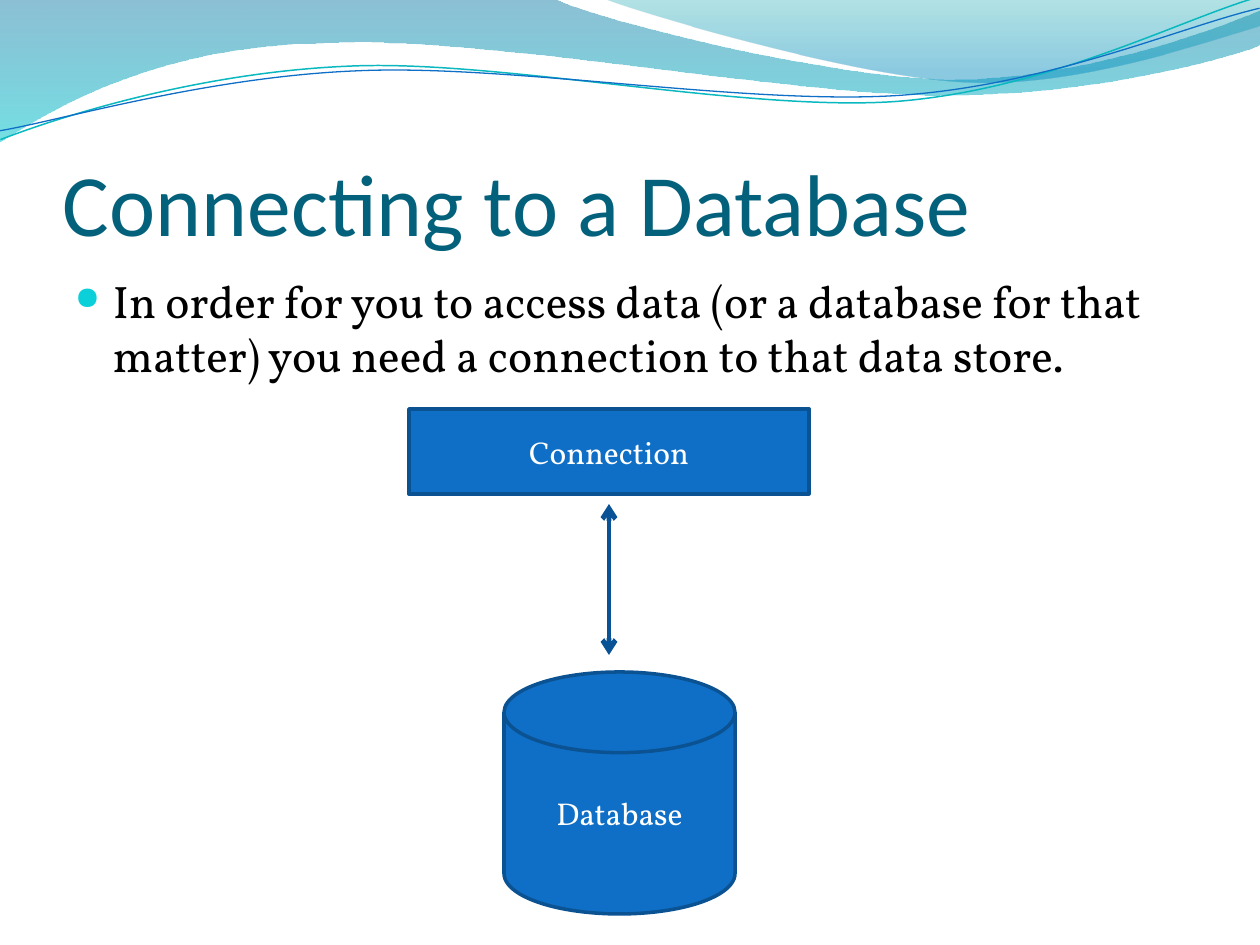
import dataclasses

import lxml.etree
import pptx
import pptx.dml.color
import pptx.enum.shapes
import pptx.enum.text
import pptx.oxml.ns
import pptx.util

PX = 914400 / 126  # EMU in one pixel
qn = pptx.oxml.ns.qn
rgb = pptx.dml.color.RGBColor.from_string
Anchor = pptx.enum.text.MSO_ANCHOR
Align = pptx.enum.text.PP_ALIGN
Shape = pptx.enum.shapes.MSO_SHAPE


@dataclasses.dataclass(frozen=True)
class Theme:
    title: str = "04617B"
    text: str = "000000"
    bullet: str = "0BD0D9"
    box: str = "0F6FC6"
    box_line: str = "0B5292"
    arrow: str = "095295"
    teal_line: str = "0AB8BF"
    label: str = "FFFFFF"
    heading_font: str = "Calibri"
    body_font: str = "Vollkorn"
    title_size: int = 50
    body_size: int = 26
    label_size: int = 18


theme = Theme()


def write_text(shape, text, *, size, color, font=theme.body_font,
               align=Align.LEFT, anchor=Anchor.TOP, insets=(12, 6, 12, 6)):
    """Fill a shape with one paragraph and return it; insets are left, top, right, bottom."""
    frame = shape.text_frame
    frame.word_wrap = True
    frame.vertical_anchor = anchor
    frame.margin_left, frame.margin_top, frame.margin_right, frame.margin_bottom = (
        round(inset * PX) for inset in insets)
    paragraph = frame.paragraphs[0]
    paragraph.alignment = align
    run = paragraph.add_run()
    run.text = text
    run.font.name = font
    run.font.size = pptx.util.Pt(size)
    run.font.color.rgb = rgb(color)
    return paragraph


def draw_curve(shapes, start, segments, close=False):
    """Draw a path; a segment of one point is straight, of three a Bezier curve."""
    points = [(round(x * PX), round(y * PX))
              for x, y in [start, *(point for segment in segments for point in segment)]]
    builder = shapes.build_freeform(*points[0], scale=1.0)
    builder.add_line_segments(points[1:], close=close)
    shape = builder.convert_to_shape()
    shape.shadow.inherit = False
    straight_parts = iter(list(shape._element.iter(qn("a:lnTo"))))
    for segment in segments:
        parts = [next(straight_parts) for _ in segment]
        if len(parts) == 3:
            curve = lxml.etree.Element(qn("a:cubicBezTo"))
            parts[0].addprevious(curve)
            for part in parts:
                curve.append(part[0])
                part.getparent().remove(part)
    return shape


presentation = pptx.Presentation()
presentation.slide_width = round(1260 * PX)
presentation.slide_height = round(945 * PX)
slide = presentation.slides.add_slide(presentation.slide_layouts[6])
shapes = slide.shapes

# Waves: start, segments, gradient stops (position, colour, opacity in percent)
waves = [
    ((0, 0), [
        [(554, -1)],
        [(600, 21), (837, 79), (955, 79)],
        [(1075, 79), (1207, 33), (1260, 11)],
        [(1261, 45)],
        [(1239, 55), (1096, 96), (940, 95)],
        [(784, 95), (481, 35), (324, 43)],
        [(163, 45), (58, 105), (-1, 142)],
        [(0, 0)],
    ], [(0, "0074A1", 45), (100, "00C6CF", 55)]),
    ((604, -1), [
        [(641, 14), (859, 78), (969, 82)],
        [(1079, 87), (1211, 40), (1260, 26)],
        [(1260, 0)],
        [(604, -1)],
    ], [(0, "00A1A9", 30), (80, "008BBF", 45)]),
]
for start, segments, stops in waves:
    wave = draw_curve(shapes, start, segments, close=True)
    wave.line.fill.background()
    wave.fill.gradient()
    wave.fill.gradient_angle = 270
    for stop, (position, color, _) in zip(wave.fill.gradient_stops, stops):
        stop.position = position / 100
        stop.color.rgb = rgb(color)
    for element, (_, _, opacity) in zip(wave._element.iter(qn("a:srgbClr")), stops):
        lxml.etree.SubElement(element, qn("a:alpha"), val=str(opacity * 1000))

# Ripples are level curves, tilted as a whole
ripples = [
    ((-2, 110), [
        [(58, 90), (199, 52), (350, 53)],
        [(499, 53), (745, 118), (896, 114)],
        [(1048, 109), (1184, 45), (1260, 27)],
    ], theme.teal_line, 0.85),
    ((-2, 101), [
        [(57, 94), (207, 57), (357, 58)],
        [(509, 58), (750, 112), (902, 108)],
        [(1052, 104), (1185, 52), (1262, 38)],
    ], theme.box, 0.75),
]
for start, segments, color, width in ripples:
    ripple = draw_curve(shapes, start, segments)
    ripple.rotation = 357.3
    ripple.fill.background()
    ripple.line.color.rgb = rgb(color)
    ripple.line.width = pptx.util.Pt(width)

title = shapes.add_textbox(*(round(n * PX) for n in (63, 97, 1134, 157)))
write_text(title, "Connecting to a Database", size=theme.title_size, color=theme.title,
           font=theme.heading_font, anchor=Anchor.BOTTOM, insets=(0, 6, 0, 0))

body = shapes.add_textbox(*(round(n * PX) for n in (63, 267, 1134, 605)))
paragraph = write_text(
    body,
    "In order for you to access data (or a database for that matter) "
    "you need a connection to that data store.",
    size=theme.body_size, color=theme.text)
paragraph.space_before = pptx.util.Pt(5)
properties = paragraph._p.get_or_add_pPr()
indent = round(38 * PX)
properties.set("marL", str(indent))
properties.set("indent", str(-indent))
bullet_color = lxml.etree.SubElement(properties, qn("a:buClr"))
lxml.etree.SubElement(bullet_color, qn("a:srgbClr"), val=theme.bullet)
lxml.etree.SubElement(properties, qn("a:buSzPct"), val="70000")
lxml.etree.SubElement(properties, qn("a:buChar"), char="●")

nodes = [
    ("Connection", Shape.RECTANGLE, (409, 409, 400, 85)),
    ("Database", Shape.FLOWCHART_MAGNETIC_DISK, (504, 672, 231, 242)),
]
for label, kind, bounds in nodes:
    node = shapes.add_shape(kind, *(round(n * PX) for n in bounds))
    node.shadow.inherit = False
    node.fill.solid()
    node.fill.fore_color.rgb = rgb(theme.box)
    node.line.color.rgb = rgb(theme.box_line)
    node.line.width = pptx.util.Pt(2)
    write_text(node, label, size=theme.label_size, color=theme.label,
               align=Align.CENTER, anchor=Anchor.MIDDLE)

arrow = shapes.add_connector(pptx.enum.shapes.MSO_CONNECTOR.STRAIGHT,
                             *(round(n * PX) for n in (609, 504, 609, 655)))
arrow.line.color.rgb = rgb(theme.arrow)
arrow.line.width = pptx.util.Pt(2.75)
arrow_line = arrow.line._get_or_add_ln()
for end in ("a:headEnd", "a:tailEnd"):
    lxml.etree.SubElement(arrow_line, qn(end), type="arrow")
lxml.etree.SubElement(arrow._element.spPr, qn("a:effectLst"))

presentation.save("out.pptx")
